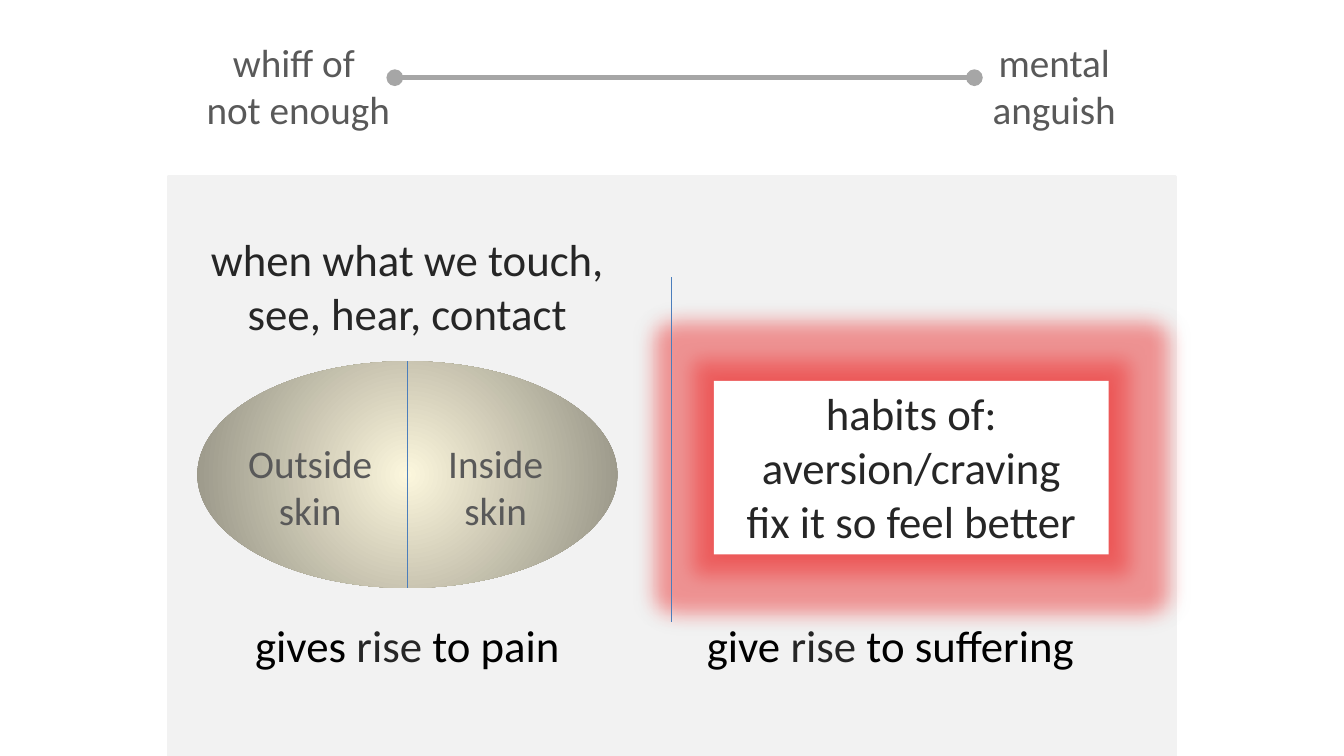
from dataclasses import dataclass

from lxml import etree
from pptx import Presentation
from pptx import util as u
from pptx.dml.color import RGBColor
from pptx.enum import shapes, text
from pptx.oxml import parse_xml
from pptx.oxml.ns import nsdecls, qn


@dataclass(frozen=True)
class Theme:
    """Colours, font and type sizes of the slide."""
    font: str = "Calibri"
    label: int = 28
    body: int = 32
    panel: str = "F2F2F2"
    white: str = "FFFFFF"
    black: str = "000000"
    dark: str = "262626"
    muted: str = "595959"
    scale: str = "A6A6A6"
    divider: str = "4B7EBC"
    alarm: str = "EB2020"
    center: str = "FCF7DD"
    rim: str = "918E81"


class Diagram:
    """Draws styled elements on the current slide, with lengths in points."""

    def __init__(self, slide, theme):
        self.slide = slide
        self.theme = theme
        self.target = slide.shapes

    def start_group(self):
        self.target = self.slide.shapes.add_group_shape().shapes

    def end_group(self):
        self.target = self.slide.shapes

    def shape(self, kind, box, fill):
        shape = self.target.add_shape(kind, *map(u.Pt, box))
        shape.shadow.inherit = False
        shape.fill.solid()
        shape.fill.fore_color.rgb = RGBColor.from_string(fill)
        shape.line.fill.background()
        return shape

    def radial(self, shape, center, rim):
        solid = shape._element.spPr.find(qn("a:solidFill"))
        solid.getparent().replace(solid, parse_xml(
            f'<a:gradFill {nsdecls("a")} rotWithShape="1"><a:gsLst>'
            f'<a:gs pos="0"><a:srgbClr val="{center}"/></a:gs>'
            f'<a:gs pos="100000"><a:srgbClr val="{rim}"/></a:gs></a:gsLst>'
            '<a:path path="circle"><a:fillToRect l="50000" t="50000" r="50000" b="50000"/>'
            '</a:path></a:gradFill>'))

    def glow(self, shape, color, radius, blur):
        effects = shape._element.spPr.find(qn("a:effectLst"))
        layers = (("a:glow", {"rad": u.Pt(radius)}, 40000),
                  ("a:outerShdw", {"blurRad": u.Pt(blur), "dist": 0, "algn": "ctr"}, 35000))
        for tag, settings, opacity in layers:
            effect = etree.SubElement(effects, qn(tag))
            for name, value in settings.items():
                effect.set(name, str(value))
            tint = etree.SubElement(effect, qn("a:srgbClr"), val=color)
            etree.SubElement(tint, qn("a:alpha"), val=str(opacity))

    def line(self, start, end, color, width, ends=None):
        connector = self.target.add_connector(
            shapes.MSO_CONNECTOR.STRAIGHT, *map(u.Pt, (*start, *end)))
        connector.line.color.rgb = RGBColor.from_string(color)
        connector.line.width = u.Pt(width)
        if ends:
            outline = connector.line._get_or_add_ln()
            for tag in ("a:headEnd", "a:tailEnd"):
                etree.SubElement(outline, qn(tag), type=ends)
        etree.SubElement(connector._element.spPr, qn("a:effectLst"))

    def textbox(self, box, paragraphs, size, color):
        textbox = self.target.add_textbox(*map(u.Pt, box))
        self.label(textbox, paragraphs, size, color)

    def label(self, shape, paragraphs, size, color):
        frame = shape.text_frame
        frame.word_wrap = True
        frame.vertical_anchor = text.MSO_ANCHOR.TOP
        frame.text = "\n".join(paragraphs)
        for paragraph in frame.paragraphs:
            paragraph.alignment = text.PP_ALIGN.CENTER
            for run in paragraph.runs:
                self.style(run, size, color)

    def caption(self, box, parts):
        textbox = self.target.add_textbox(*map(u.Pt, box))
        textbox.text_frame.word_wrap = True
        paragraph = textbox.text_frame.paragraphs[0]
        paragraph.alignment = text.PP_ALIGN.CENTER
        for words, color in parts:
            run = paragraph.add_run()
            run.text = words
            self.style(run, self.theme.body, color)

    def style(self, run, size, color):
        run.font.name = self.theme.font
        run.font.size = u.Pt(size)
        run.font.color.rgb = RGBColor.from_string(color)


def main():
    presentation = Presentation()
    presentation.slide_width, presentation.slide_height = u.Pt(960), u.Pt(540)
    slide = presentation.slides.add_slide(presentation.slide_layouts[6])
    theme = Theme()
    diagram = Diagram(slide, theme)

    panel = diagram.shape(shapes.MSO_SHAPE.RECTANGLE, (120, 126, 720, 414), theme.panel)
    panel.line.color.rgb = RGBColor.from_string(theme.panel)
    panel.line.width = u.Pt(2)

    diagram.start_group()
    diagram.line((282, 55.5), (696, 55.5), theme.scale, 4, "oval")
    for left, label in ((132, ["whiff of ", "not enough"]), (672, ["mental anguish"])):
        diagram.textbox((left, 24, 162, 75), label, theme.label, theme.muted)
    diagram.end_group()

    diagram.textbox((120, 162, 342, 85), ["when what we touch, see, hear, contact"],
                    theme.body, theme.dark)
    habits = diagram.shape(shapes.MSO_SHAPE.RECTANGLE, (510, 272, 282, 124), theme.white)
    diagram.glow(habits, theme.alarm, 28, 10)
    diagram.label(habits, ["habits of:", "aversion/craving", "fix it so feel better"],
                  theme.body, theme.dark)
    diagram.line((480, 198), (480, 444), theme.divider, 0.75)

    diagram.start_group()
    skin = diagram.shape(shapes.MSO_SHAPE.OVAL, (141, 258, 300, 162), theme.center)
    diagram.radial(skin, theme.center, theme.rim)
    for left, side in ((164, "Outside skin"), (296.5, "Inside skin")):
        diagram.textbox((left, 310, 115, 75), [side], theme.label, theme.muted)
    diagram.line((291, 258), (291, 420), theme.divider, 0.75)
    diagram.end_group()

    for left, verb, outcome in ((141, "gives ", " to pain"), (486, "give ", " to suffering")):
        diagram.caption((left, 438, 300, 46), (
            (verb, theme.black), ("rise", theme.dark), (outcome, theme.black)))

    presentation.save("out.pptx")


if __name__ == "__main__":
    main()
